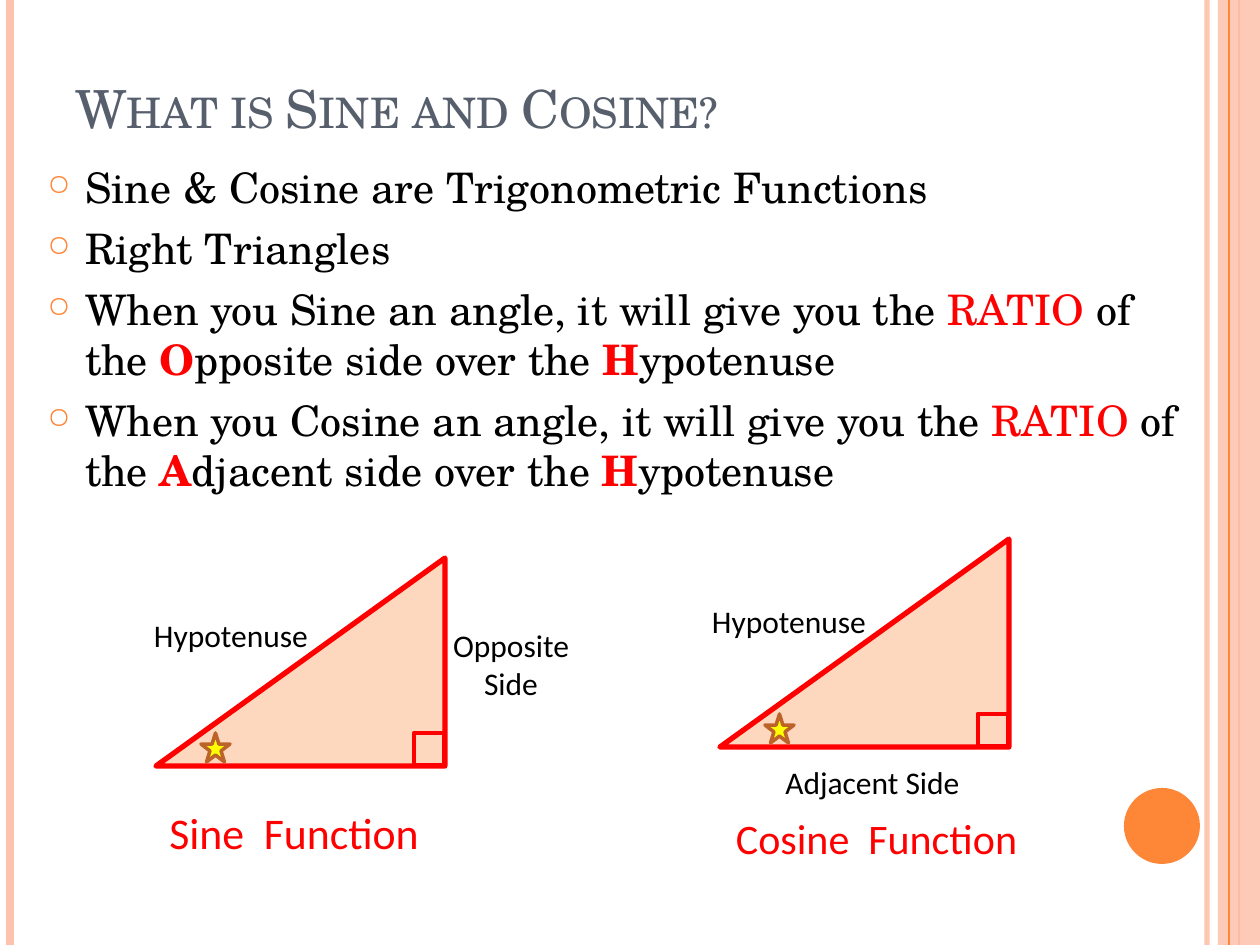
from lxml import etree
from pptx import Presentation
from pptx import util as u
from pptx.dml.color import RGBColor
from pptx.enum import shapes, text
from pptx.oxml.ns import qn

PX = 914400 / 126  # EMU per px
SERIF, SANS = "TeX Gyre Schola", "Calibri"
BLACK = RGBColor(0, 0, 0)
RED = RGBColor(0xFF, 0, 0)
YELLOW = RGBColor(0xFF, 0xFF, 0)
ORANGE = RGBColor(0xFE, 0x86, 0x37)
PEACH = RGBColor(0xFE, 0xC3, 0xAE)
BROWN = RGBColor(0xBC, 0x63, 0x29)
SLATE = RGBColor(0x57, 0x5F, 0x6D)


def px(*lengths):
    return [u.Emu(round(length * PX)) for length in lengths]


def add_child(parent, tag, **attributes):
    return etree.SubElement(parent, qn(tag), attributes)


def set_alpha(properties, percent):
    color = next(properties.iter(qn("a:srgbClr")))
    add_child(color, "a:alpha", val=str(percent * 1000))


def add_rule(slide, x, color, width, alpha=100):
    """Vertical line over the full slide height."""
    rule = slide.shapes.add_connector(
        shapes.MSO_CONNECTOR.STRAIGHT, *px(x, 0, x, 945))
    rule.line.color.rgb = color
    rule.line.width = u.Pt(width)
    if alpha < 100:
        set_alpha(rule.line._get_or_add_ln(), alpha)
    add_child(rule._element.spPr, "a:effectLst")


def add_figure(slide, kind, box, fill=None, line=None, width=1, alpha=100):
    shape = slide.shapes.add_shape(kind, *px(*box))
    shape.shadow.inherit = False
    if fill is None:
        shape.fill.background()
    else:
        shape.fill.solid()
        shape.fill.fore_color.rgb = fill
        if alpha < 100:
            set_alpha(shape._element.spPr, alpha)
    if line is None:
        shape.line.fill.background()
    else:
        shape.line.color.rgb = line
        shape.line.width = u.Pt(width)
    return shape


def add_bullet(paragraph):
    paragraph.space_before = u.Pt(6)
    properties = paragraph._p.get_or_add_pPr()
    indent = int(u.Inches(0.3))
    properties.set("marL", str(indent))
    properties.set("indent", str(-indent))
    bullet_color = add_child(properties, "a:buClr")
    add_child(bullet_color, "a:srgbClr", val=str(ORANGE))
    add_child(properties, "a:buSzPct", val="70000")
    add_child(properties, "a:buChar", char="○")


def add_text(slide, box, paragraphs, size=18, font=SANS, color=BLACK,
             align=text.PP_ALIGN.CENTER, anchor=text.MSO_ANCHOR.TOP,
             wrap=False, grow=True, bullets=False, small_caps=False):
    """Each paragraph is a list of (words, color or None, bold) runs."""
    frame = slide.shapes.add_textbox(*px(*box)).text_frame
    frame.word_wrap = wrap
    frame.vertical_anchor = anchor
    if grow:
        frame.auto_size = text.MSO_AUTO_SIZE.SHAPE_TO_FIT_TEXT
    for index, runs in enumerate(paragraphs):
        paragraph = frame.add_paragraph() if index else frame.paragraphs[0]
        paragraph.alignment = align
        if bullets:
            add_bullet(paragraph)
        for words, run_color, bold in runs:
            for number, part in enumerate(words.split("\n")):
                if number:
                    paragraph.add_line_break()
                run = paragraph.add_run()
                run.text = part
                run.font.size = u.Pt(size)
                run.font.name = font
                run.font.bold = bold
                run.font.color.rgb = run_color or color
                if small_caps:
                    run.font._element.set("cap", "small")


def plain(words):
    return [(words, None, False)]


def ratio_sentence(function, side):
    return [(f"When you {function} an angle, it will give you the ", None, False),
            ("RATIO", RED, False), (" of the ", None, False),
            (side[0], RED, True), (side[1:] + " side over the ", None, False),
            ("H", RED, True), ("ypotenuse", None, False)]


def add_triangle(slide, left, top):
    """Right triangle with a starred angle and a right-angle mark."""
    kinds = shapes.MSO_SHAPE
    triangle = add_figure(slide, kinds.RIGHT_TRIANGLE, (left, top, 289, 208),
                          ORANGE, RED, 3, alpha=32)
    triangle._element.spPr.xfrm.set("flipH", "1")
    add_figure(slide, kinds.STAR_5_POINT, (left + 45, top + 175, 29, 29),
               YELLOW, BROWN, 2)
    add_figure(slide, kinds.RECTANGLE, (left + 258, top + 175, 30, 32),
               line=RED, width=2.75)


def add_decoration(slide):
    add_rule(slide, 1207, PEACH, 3, alpha=93)
    add_rule(slide, 10, PEACH, 4.5)
    add_rule(slide, 1239, ORANGE, 1.5)
    add_figure(slide, shapes.MSO_SHAPE.RECTANGLE, (1218, 0, 42, 945), PEACH, alpha=87)
    add_rule(slide, 1229, ORANGE, 0.75)
    add_figure(slide, shapes.MSO_SHAPE.OVAL, (1124, 788, 76, 76), ORANGE)


def main():
    presentation = Presentation()
    presentation.slide_width, presentation.slide_height = px(1260, 945)
    slide = presentation.slides.add_slide(presentation.slide_layouts[6])
    add_decoration(slide)

    # Title and bullets
    left = text.PP_ALIGN.LEFT
    add_text(slide, (63, 38, 1029, 107), [plain("What is Sine and Cosine?")],
             size=30, font=SERIF, color=SLATE, align=left, wrap=True, grow=False,
             anchor=text.MSO_ANCHOR.BOTTOM, small_caps=True)
    add_text(slide, (35, 155, 1173, 441),
             [plain("Sine & Cosine are Trigonometric Functions"),
              plain("Right Triangles"),
              ratio_sentence("Sine", "Opposite"),
              ratio_sentence("Cosine", "Adjacent")],
             size=24, font=SERIF, align=left, wrap=True, grow=False, bullets=True)

    # Sine triangle
    add_triangle(slide, 156, 558)
    add_text(slide, (438, 620, 146, 89), [plain("Opposite\nSide")])
    add_text(slide, (141, 610, 180, 50), [plain("Hypotenuse")])
    add_text(slide, (155, 800, 278, 66), [plain("Sine  Function")], size=25, color=RED)

    # Cosine triangle
    add_triangle(slide, 720, 539)
    add_text(slide, (748, 757, 249, 50), [plain("Adjacent Side")], wrap=True)
    add_text(slide, (699, 596, 180, 50), [plain("Hypotenuse")])
    add_text(slide, (717, 806, 319, 64), [plain("Cosine  Function")], size=24, color=RED)

    presentation.save("out.pptx")


if __name__ == "__main__":
    main()
